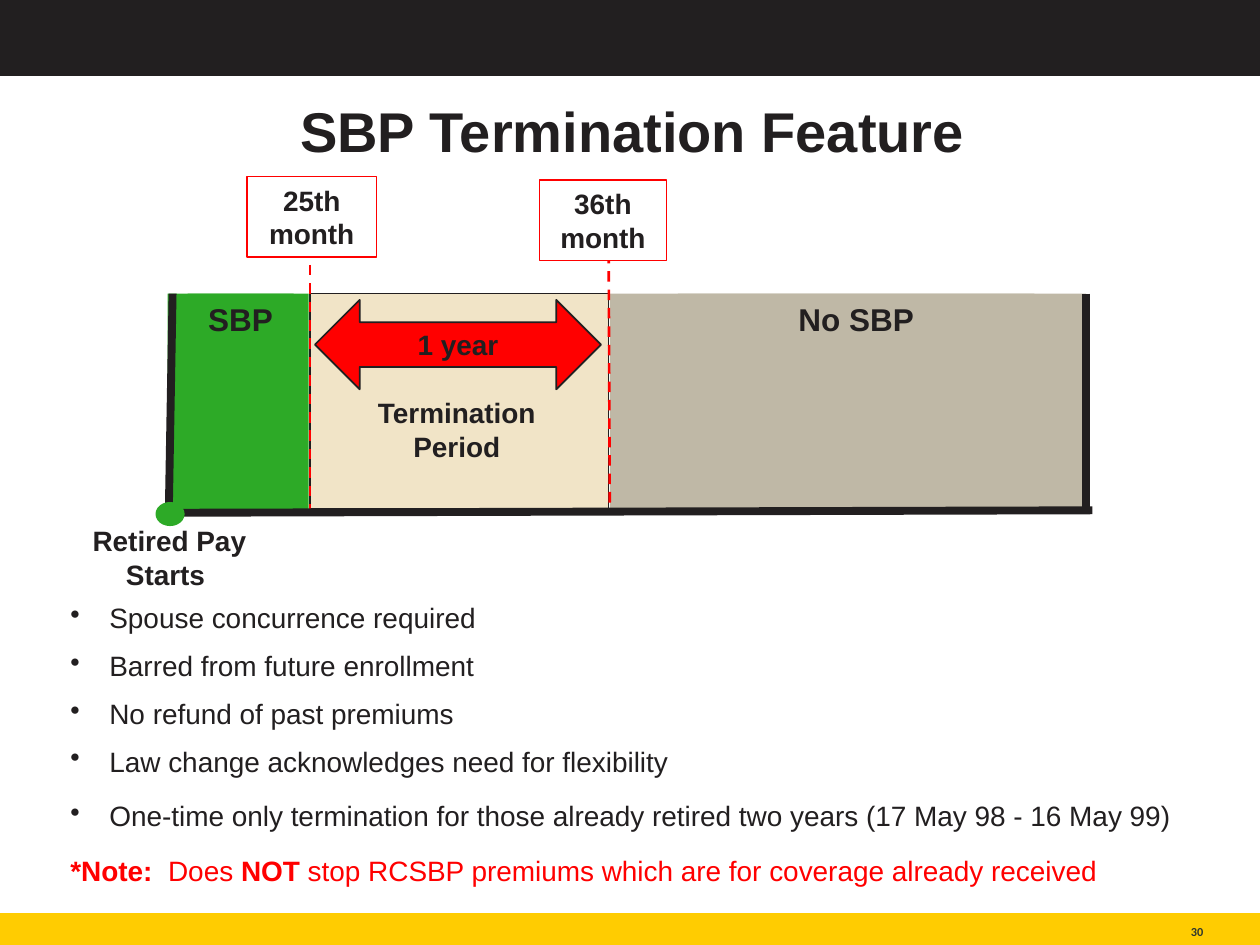
"""Build the SBP Termination Feature timeline slide."""
import pptx
import pptx.dml.color
import pptx.enum.dml
import pptx.enum.shapes
import pptx.enum.text
import pptx.oxml
import pptx.oxml.ns
import pptx.util

Inches, Pt = pptx.util.Inches, pptx.util.Pt
RGBColor = pptx.dml.color.RGBColor
SHAPE = pptx.enum.shapes.MSO_SHAPE
ALIGN = pptx.enum.text.PP_ALIGN
ANCHOR = pptx.enum.text.MSO_ANCHOR
DASH = pptx.enum.dml.MSO_LINE.DASH

BLACK = RGBColor(0x22, 0x1F, 0x20)
YELLOW = RGBColor(0xFF, 0xCC, 0x01)
WHITE = RGBColor(0xFF, 0xFF, 0xFF)
RED = RGBColor(0xFF, 0x00, 0x00)
GREEN = RGBColor(0x2D, 0xAA, 0x27)
CREAM = RGBColor(0xF1, 0xE4, 0xC7)
TAUPE = RGBColor(0xBF, 0xB8, 0xA6)
GRAY = RGBColor(0x2F, 0x37, 0x2F)

prs = pptx.Presentation()
prs.slide_width, prs.slide_height = Inches(10), Inches(7.5)
s = prs.slides.add_slide(prs.slide_layouts[6])


def add_text(text, at=None, sp=None, size=16, color=BLACK, bold=True, font="Arial",
             align=ALIGN.CENTER, anchor=ANCHOR.TOP, spacing=None, wrap=True, inset=None):
    if sp is None:
        sp = s.shapes.add_textbox(*map(Inches, at))
    tf = sp.text_frame
    tf.word_wrap = wrap
    tf.vertical_anchor = anchor
    if inset is not None:
        tf.margin_left = tf.margin_top = tf.margin_right = tf.margin_bottom = Inches(inset)
    tf.text = text
    for p in tf.paragraphs:
        p.alignment = align
        p.line_spacing = spacing
        for r in p.runs:
            r.font.name, r.font.size, r.font.bold = font, Pt(size), bold
            r.font.color.rgb = color
    return tf


def add_block(at, fill, line=None, width=1, kind=SHAPE.RECTANGLE):
    sp = s.shapes.add_shape(kind, *map(Inches, at))
    sp.shadow.inherit = False
    sp.fill.solid()
    sp.fill.fore_color.rgb = fill
    if line is None:
        sp.line.fill.background()
    else:
        sp.line.color.rgb = line
        sp.line.width = Pt(width)
    return sp


add_block((0, 0.01, 10, 0.59), BLACK, BLACK)
add_block((0, 7.25, 10, 0.27), YELLOW, YELLOW)
add_text("30", (8.68, 7.25, 0.87, 0.2), size=7, color=GRAY, font="Calibri",
         align=ALIGN.RIGHT, anchor=ANCHOR.BOTTOM, wrap=False, inset=0)
add_text("SBP Termination Feature", (0.71, 0.58, 8.62, 0.97), size=32,
         anchor=ANCHOR.MIDDLE, spacing=0.9)

bullets = [
    "Spouse concurrence required",
    "Barred from future enrollment",
    "No refund of past premiums",
    "Law change acknowledges need for flexibility",
    "One-time only termination for those already retired two years (17 May 98 - 16 May 99)",
]
tf = add_text("\n".join(bullets), (0.46, 4.75, 9.08, 2.41), bold=False,
              align=ALIGN.LEFT, spacing=0.9)
for p in tf.paragraphs:
    pPr = p._p.get_or_add_pPr()
    pPr.set("marL", str(Inches(0.31)))
    pPr.set("indent", str(-Inches(0.31)))
    bullet = pptx.oxml.parse_xml(f'<a:buChar {pptx.oxml.ns.nsdecls("a")} char="•"/>')
    pPr.append(bullet)
note = tf.add_paragraph()
for text, bold in (("*Note:  ", True), ("Does ", False), ("NOT", True),
                   (" stop RCSBP premiums which are for coverage already received", False)):
    r = note.add_run()
    r.text = text
    r.font.name, r.font.size, r.font.bold = "Arial", Pt(16), bold
    r.font.color.rgb = RED
for p in tf.paragraphs[1:]:
    p.space_before = Pt(10)
for p in tf.paragraphs[-2:]:
    p.line_spacing = 1.1

add_block((4.84, 2.33, 3.78, 1.72), TAUPE)
add_text("No SBP", sp=add_block((5.38, 2.33, 2.83, 0.4), TAUPE), size=18)
add_block((2.46, 2.33, 2.37, 1.71), CREAM, BLACK, 0.75)
add_block((1.33, 2.33, 1.12, 1.74), GREEN)
add_text("SBP", sp=add_block((1.49, 2.33, 0.84, 0.25), GREEN), size=18)

for x1, y1, x2, y2, color, width, dash in (
    (1.37, 2.33, 1.34, 4.06, BLACK, 4.5, None),
    (2.46, 1.81, 2.46, 4.07, RED, 1.5, DASH),
    (4.83, 1.86, 4.84, 4.07, RED, 1.5, DASH),
    (8.62, 2.33, 8.62, 4.05, BLACK, 4.5, None),
    (8.67, 4.05, 1.33, 4.07, BLACK, 4.5, None),
):
    line = s.shapes.add_connector(pptx.enum.shapes.MSO_CONNECTOR.STRAIGHT,
                                  *map(Inches, (x1, y1, x2, y2)))
    line.line.color.rgb = color
    line.line.width = Pt(width)
    line.line.dash_style = dash
    effects = pptx.oxml.parse_xml(f'<a:effectLst {pptx.oxml.ns.nsdecls("a")}/>')
    line._element.spPr.append(effects)

for text, at in (("25th month", (1.96, 1.4, 1.03, 0.64)),
                 ("36th month", (4.28, 1.43, 1.01, 0.64))):
    add_text(text, sp=add_block(at, WHITE, RED, 0.75), anchor=ANCHOR.MIDDLE)

arrow = add_block((2.5, 2.38, 2.27, 0.71), RED, BLACK, kind=SHAPE.LEFT_RIGHT_ARROW)
add_text("1 year", sp=arrow, anchor=ANCHOR.MIDDLE)
add_text("Termination Period", (2.87, 3.09, 1.51, 0.64))
add_block((1.25, 4, 0.2, 0.16), GREEN, GREEN, 2.25, SHAPE.OVAL)
add_text("Retired Pay\nStarts ", (0.51, 4.11, 1.67, 0.64))

prs.save("out.pptx")
